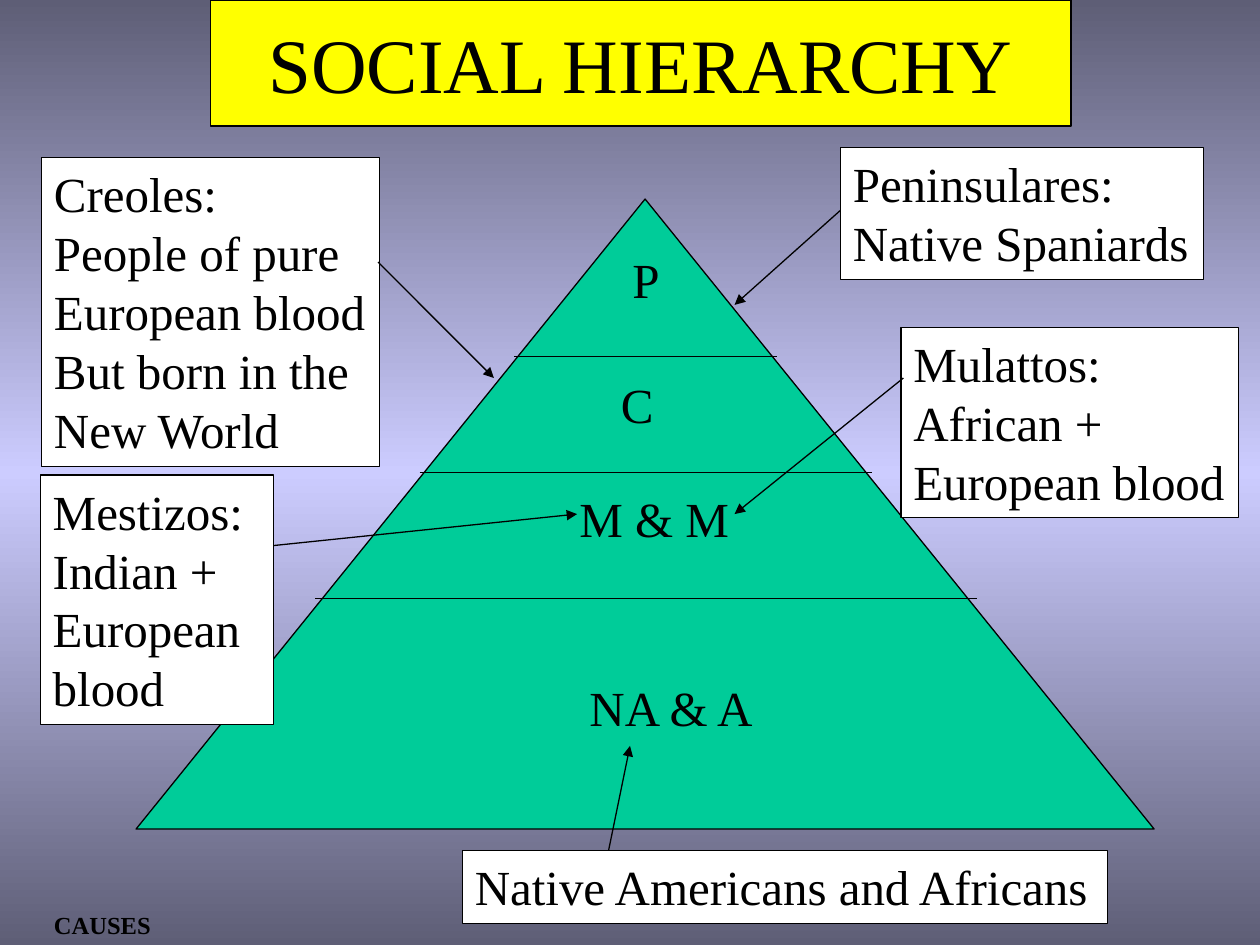
from lxml.etree import SubElement
from pptx import Presentation
from pptx.dml.color import RGBColor
from pptx.enum.shapes import MSO_CONNECTOR, MSO_SHAPE
from pptx.enum.text import MSO_ANCHOR, MSO_AUTO_SIZE, PP_ALIGN
from pptx.oxml.ns import qn
from pptx.util import Inches, Pt


def color(value):
    return RGBColor.from_string(value)


class HierarchySlide:
    """Holds the style and the current slide, and draws each kind of element."""

    font = "Times New Roman"
    ink = "000000"
    line_width = Pt(0.75)

    def __init__(self, deck):
        self.slide = deck.slides.add_slide(deck.slide_layouts[5])

    def background(self, stops):
        fill = self.slide.background.fill
        fill.gradient()
        fill.gradient_angle = 90
        stop_list = self.slide.element.find(".//" + qn("a:gsLst"))
        for stop in list(stop_list):
            stop_list.remove(stop)
        for percent, value in stops:
            stop = SubElement(stop_list, qn("a:gs"), pos=str(percent * 1000))
            SubElement(stop, qn("a:srgbClr"), val=value)

    def outline(self, part, fill):
        part.fill.solid()
        part.fill.fore_color.rgb = color(fill)
        part.line.color.rgb = color(self.ink)
        part.line.width = self.line_width
        part.shadow.inherit = False

    def set_text(self, part, lines, size, align=PP_ALIGN.LEFT, bold=False):
        frame = part.text_frame
        frame.text = "\n".join(lines)
        for paragraph in frame.paragraphs:
            paragraph.alignment = align
            font = paragraph.font
            font.name, font.size, font.bold = self.font, Pt(size), bold
            font.color.rgb = color(self.ink)
        return frame

    def title(self, text, left, top, width, height, fill):
        heading = self.slide.shapes.title
        heading.left, heading.top = Inches(left), Inches(top)
        heading.width, heading.height = Inches(width), Inches(height)
        self.outline(heading, fill)
        frame = self.set_text(heading, [text], 44, PP_ALIGN.CENTER)
        frame.vertical_anchor = MSO_ANCHOR.MIDDLE
        frame.auto_size = MSO_AUTO_SIZE.NONE

    def shape(self, preset, left, top, width, height, fill):
        part = self.slide.shapes.add_shape(
            preset, Inches(left), Inches(top), Inches(width), Inches(height))
        self.outline(part, fill)
        return part

    def note(self, lines, left, top, width, height, wrap=False):
        box = self.shape(MSO_SHAPE.RECTANGLE, left, top, width, height, "FFFFFF")
        frame = self.set_text(box, lines, 28)
        frame.vertical_anchor = MSO_ANCHOR.TOP
        frame.word_wrap = wrap
        frame.auto_size = MSO_AUTO_SIZE.SHAPE_TO_FIT_TEXT

    def label(self, text, left, top, width, height, size=28, bold=False, wrap=False):
        box = self.slide.shapes.add_textbox(
            Inches(left), Inches(top), Inches(width), Inches(height))
        frame = self.set_text(box, [text], size, bold=bold)
        frame.word_wrap = wrap
        frame.auto_size = MSO_AUTO_SIZE.SHAPE_TO_FIT_TEXT

    def line(self, start, end, arrow=False):
        connector = self.slide.shapes.add_connector(
            MSO_CONNECTOR.STRAIGHT, *map(Inches, (*start, *end)))
        connector.line.color.rgb = color(self.ink)
        connector.line.width = self.line_width
        properties = connector.element.spPr
        if arrow:
            SubElement(properties.find(qn("a:ln")), qn("a:tailEnd"), type="triangle")
        SubElement(properties, qn("a:effectLst"))


def main():
    deck = Presentation()
    deck.slide_width, deck.slide_height = Inches(10), Inches(7.5)
    page = HierarchySlide(deck)
    page.background([(0, "5E5E76"), (50, "CCCCFF"), (100, "5E5E76")])
    page.title("SOCIAL HIERARCHY", 1.67, 0, 6.83, 1, "FFFF00")

    page.shape(MSO_SHAPE.ISOSCELES_TRIANGLE, 1.08, 1.58, 8.08, 5, "00CC99")
    for left, right, level in [(4.08, 6.17, 2.83), (3.33, 6.92, 3.75), (2.5, 7.75, 4.75)]:
        page.line((left, level), (right, level))
    for tier, left, top, width in [
        ("P", 4.92, 1.93, 0.42),
        ("C", 4.83, 2.92, 0.53),
        ("M & M", 4.5, 3.83, 1.39),
        ("NA & A", 4.58, 5.33, 1.54),
    ]:
        page.label(tier, left, top, width, 0.57)

    classes = [
        (["Peninsulares:", "Native Spaniards"],
         (6.67, 1.17, 2.88, 1.05), (6.67, 1.67), (5.83, 2.42)),
        (["Creoles:", "People of pure", "European blood", "But born in the", "New World"],
         (0.33, 1.25, 2.68, 2.45), (3, 2.08), (3.92, 3)),
        (["Mestizos:", "Indian +", "European", "blood"],
         (0.32, 3.77, 1.85, 1.98, True), (2.17, 4.33), (4.58, 4.08)),
        (["Mulattos:", "African +", "European blood"],
         (7.15, 2.6, 2.68, 1.51), (7.17, 3), (5.83, 4.08)),
        (["Native Americans and Africans"],
         (3.67, 6.75, 5.12, 0.58), (4.83, 6.75), (5, 5.92)),
    ]
    for lines, place, start, end in classes:
        page.note(lines, *place)
        page.line(start, end, arrow=True)

    page.label("CAUSES", 0.33, 7.17, 1, 0.33, size=14, bold=True, wrap=True)
    deck.save("out.pptx")


if __name__ == "__main__":
    main()
